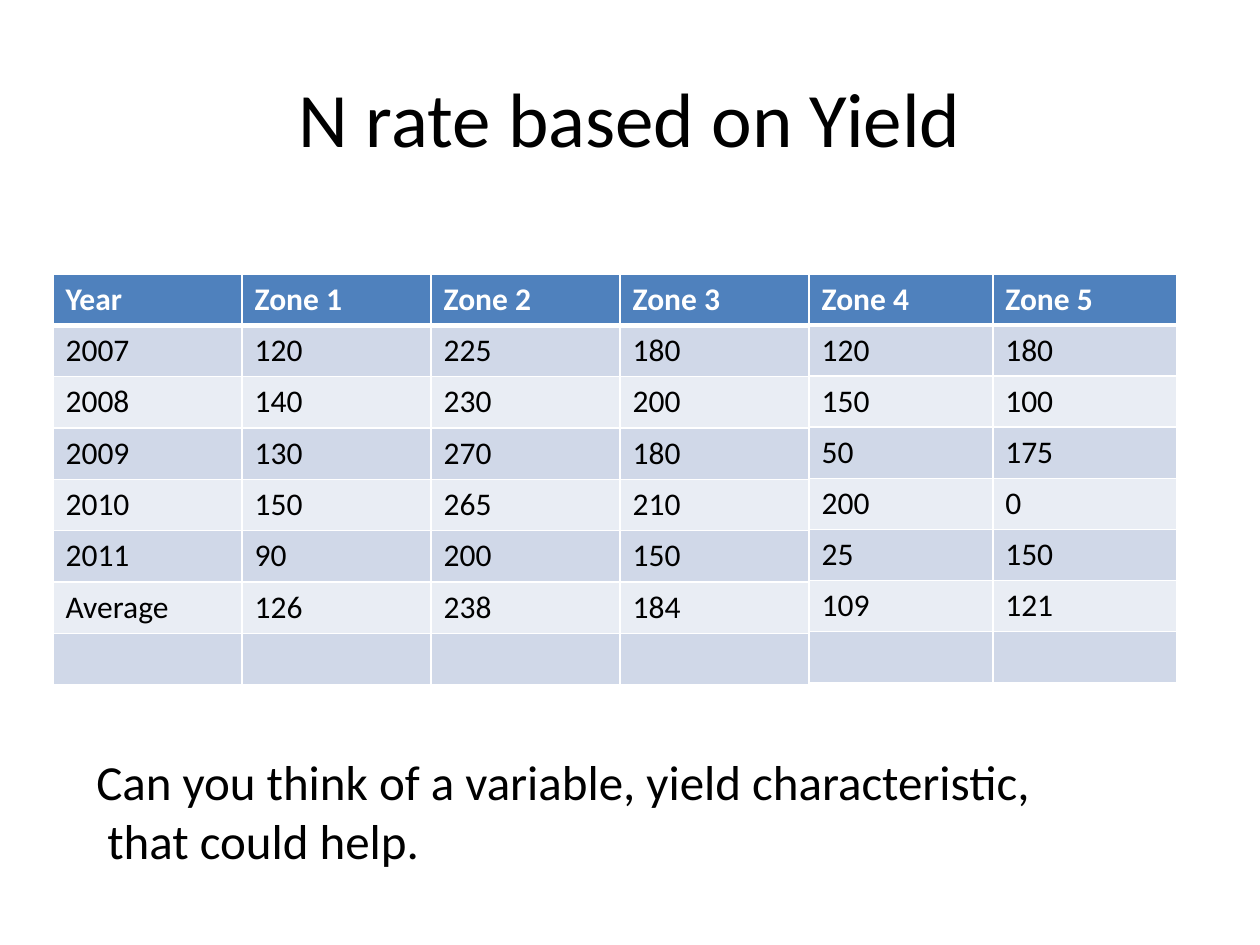
import pptx
import pptx.util
import pptx.dml.color
import pptx.enum.text
import pptx.oxml
import pptx.oxml.ns

Pt = pptx.util.Pt
RGB = pptx.dml.color.RGBColor.from_string
ENUM = pptx.enum.text

THEME = {
    "font": "Calibri", "ink": "000000", "white": "FFFFFF",
    "head": "4F81BD", "bands": ("D0D8E8", "E9EDF4"),
    "title": 44, "cell": 18, "note": 28,
}


def style(font, size, color, bold=False):
    looks = {"name": THEME["font"], "size": Pt(size), "bold": bold}
    for key, value in looks.items():
        setattr(font, key, value)
    font.color.rgb = RGB(color)


def edge(cell, side, width):
    cell.fill.background()
    line = pptx.oxml.parse_xml(
        f'<a:ln{side} {pptx.oxml.ns.nsdecls("a")} w="{Pt(width)}"><a:solidFill>'
        f'<a:srgbClr val="{THEME["white"]}"/></a:solidFill></a:ln{side}>')
    props = cell._tc.get_or_add_tcPr()
    props.insert(len(props) - 1, line)  # borders come before the fill


deck = pptx.Presentation()
deck.slide_width, deck.slide_height = Pt(720), Pt(540)
slide = deck.slides.add_slide(deck.slide_layouts[5])

# Title
title = slide.shapes.title
box = {"left": 36, "top": 21.6, "width": 648, "height": 90}
for key, value in box.items():
    setattr(title, key, Pt(value))
title.text_frame.text = "N rate based on Yield"
title.text_frame.vertical_anchor = ENUM.MSO_ANCHOR.MIDDLE
para = title.text_frame.paragraphs[0]
para.alignment = ENUM.PP_ALIGN.CENTER
style(para.runs[0].font, THEME["title"], THEME["ink"])

# Two tables side by side: left, column width, row height, rows
tables = [
    (30.3, 108, 29.35, [
        ("Year", "Zone 1", "Zone 2", "Zone 3"),
        ("2007", "120", "225", "180"),
        ("2008", "140", "230", "200"),
        ("2009", "130", "270", "180"),
        ("2010", "150", "265", "210"),
        ("2011", "90", "200", "150"),
        ("Average", "126", "238", "184"),
        ("", "", "", ""),
    ]),
    (462.3, 105, 29.2, [
        ("Zone 4", "Zone 5"),
        ("120", "180"),
        ("150", "100"),
        ("50", "175"),
        ("200", "0"),
        ("25", "150"),
        ("109", "121"),
        ("", ""),
    ]),
]
for left, wide, high, rows in tables:
    count = len(rows[0])
    grid = slide.shapes.add_table(
        len(rows), count, Pt(left), Pt(156.5),
        Pt(wide * count), Pt(high * len(rows))).table
    for col in grid.columns:
        col.width = Pt(wide)
    for r, row in enumerate(rows):
        grid.rows[r].height = Pt(high)
        head = r == 0
        for c, text in enumerate(row):
            cell = grid.cell(r, c)
            for side in "LRTB":
                thick = (head and side == "B") or (r == 1 and side == "T")
                edge(cell, side, 3 if thick else 1)
            cell.fill.solid()
            cell.fill.fore_color.rgb = RGB(
                THEME["head"] if head else THEME["bands"][(r - 1) % 2])
            cell.text = text
            style(cell.text_frame.paragraphs[0].font, THEME["cell"],
                  THEME["white" if head else "ink"], head)

# Question below the tables
note = slide.shapes.add_textbox(Pt(48), Pt(426), Pt(554), Pt(75)).text_frame
note.word_wrap = False
note.auto_size = ENUM.MSO_AUTO_SIZE.SHAPE_TO_FIT_TEXT
note.text = "Can you think of a variable, yield characteristic,\v that could help."
for run in note.paragraphs[0].runs:
    style(run.font, THEME["note"], THEME["ink"])

deck.save("out.pptx")
